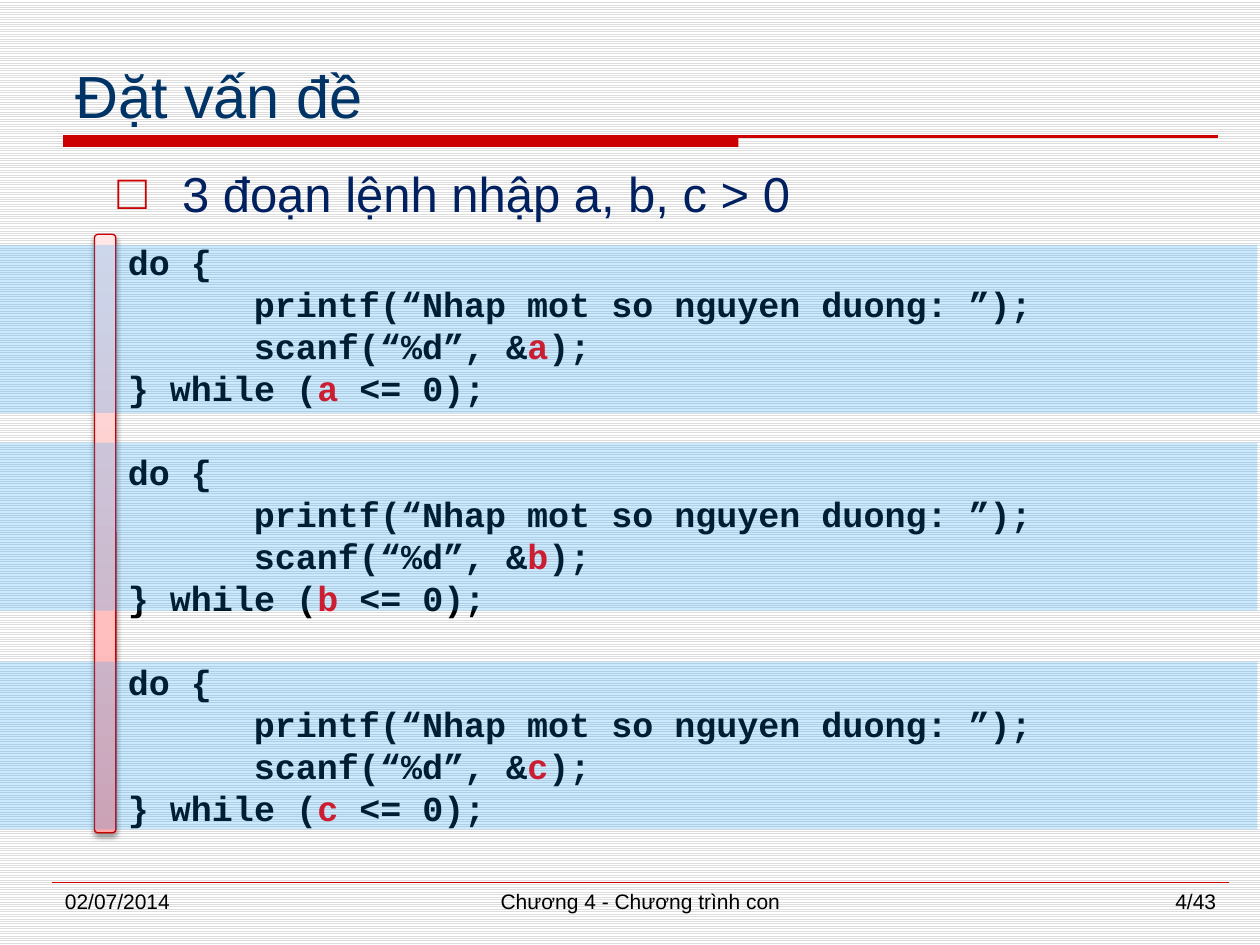
from lxml import etree
from pptx import Presentation
from pptx.dml.color import RGBColor
from pptx.enum.dml import MSO_PATTERN
from pptx.enum.shapes import MSO_CONNECTOR, MSO_SHAPE
from pptx.enum.text import MSO_ANCHOR, PP_ALIGN
from pptx.oxml.ns import qn
from pptx.util import Pt

LEFT, CENTER, RIGHT, JUSTIFY = PP_ALIGN.LEFT, PP_ALIGN.CENTER, PP_ALIGN.RIGHT, PP_ALIGN.JUSTIFY
TOP, BOTTOM = MSO_ANCHOR.TOP, MSO_ANCHOR.BOTTOM
RECTANGLE, ROUNDED = MSO_SHAPE.RECTANGLE, MSO_SHAPE.ROUNDED_RECTANGLE
STRAIGHT = MSO_CONNECTOR.STRAIGHT

# Content
TITLE = "Đặt vấn đề"
BULLET = "3 đoạn lệnh nhập a, b, c > 0"
VARIABLES = ["a", "b", "c"]
# Each line: text before the variable, text after it (None: no variable)
LOOP = [
    ("do {", None),
    ("\tprintf(“Nhap mot so nguyen duong: ”);", None),
    ("\tscanf(“%d”, &", ");"),
    ("} while (", " <= 0);"),
]
FOOTERS = [  # text, left, width, alignment
    ("02/07/2014", 30, 156, LEFT),
    ("Chương 4 - Chương trình con", 210, 312, CENTER),
    ("4/43", 546, 156, RIGHT),
]
BAND_TOPS = [139.9, 252.9, 378]

THEME = {
    "paper": "FFFFFF", "stripe": "DDDDDD", "red": "CC0000", "band": "0099FF",
    "bar_line": "C80000",
    "bar_stops": [(0, "FFA5A5"), (35, "FFBFBF"), (100, "FFE7E7")],
    "title": {"size": Pt(34), "name": "Arial", "color": "003366"},
    "bullet": {"size": Pt(28), "name": "Arial", "color": "002060"},
    "footer": {"size": Pt(12), "name": "Arial", "color": "000000"},
    "code": {"size": Pt(20), "name": "Courier New", "bold": True, "color": "000000"},
    "variable": {"size": Pt(20), "name": "Courier New", "bold": True, "color": "FF0000"},
}
CODE_PITCH = 24
CODE_TAB = 72


def rgb(value):
    return RGBColor.from_string(value)


def add_xml(parent, tag, **attributes):
    return etree.SubElement(parent, qn(tag), {key: str(value) for key, value in attributes.items()})


def add_span(para, text, style):
    span = para.add_run()
    span.text = text
    for key, value in style.items():
        if key == "color":
            span.font.color.rgb = rgb(value)
        else:
            setattr(span.font, key, value)


def add_box(page, left, top, width, height, anchor=TOP):
    frame = page.shapes.add_textbox(Pt(left), Pt(top), Pt(width), Pt(height)).text_frame
    frame.word_wrap = True
    frame.vertical_anchor = anchor
    return frame


def add_line(page, left, right, y, weight):
    line = page.shapes.add_connector(STRAIGHT, Pt(left), Pt(y), Pt(right), Pt(y))
    line.line.color.rgb = rgb(THEME["red"])
    line.line.width = Pt(weight)
    add_xml(line._element.spPr, "a:effectLst")


def add_block(page, kind, left, top, width, height, color):
    block = page.shapes.add_shape(kind, Pt(left), Pt(top), Pt(width), Pt(height))
    block.shadow.inherit = False
    block.fill.solid()
    block.fill.fore_color.rgb = rgb(color)
    block.line.fill.background()
    return block


def add_side_bar(page):
    bar = add_block(page, ROUNDED, 54, 133.92, 12.24, 342, THEME["red"])
    bar.line.color.rgb = rgb(THEME["bar_line"])
    bar.line.width = Pt(0.75)
    bar.fill.gradient()
    bar.fill.gradient_angle = 90
    properties = bar._element.spPr
    stops = properties.find(qn("a:gradFill")).find(qn("a:gsLst"))
    for stop in list(stops):
        stops.remove(stop)
    for position, color in THEME["bar_stops"]:
        add_xml(add_xml(stops, "a:gs", pos=position * 1000), "a:srgbClr", val=color)
    shadow = add_xml(properties.find(qn("a:effectLst")), "a:outerShdw",
                     blurRad=Pt(3.1), dist=Pt(1.6), dir=5400000, rotWithShape=0)
    add_xml(add_xml(shadow, "a:srgbClr", val="000000"), "a:alpha", val=38000)


def add_bullet(page):
    para = add_box(page, 60, 90, 624, 44).paragraphs[0]
    para.alignment = JUSTIFY
    para.space_before = Pt(3)
    add_span(para, BULLET, THEME["bullet"])
    properties = para._p.get_or_add_pPr()
    properties.set("marL", str(Pt(36.9)))
    properties.set("indent", str(-Pt(36.9)))
    add_xml(add_xml(properties, "a:buClr"), "a:srgbClr", val=THEME["red"])
    add_xml(properties, "a:buFont", typeface=THEME["bullet"]["name"])
    add_xml(properties, "a:buChar", char="□")


def add_code(page):
    frame = add_box(page, 66, 133.92, 552, 346.32)
    frame.margin_top = Pt(3.3)
    for block, variable in enumerate(VARIABLES):
        for row, (before, after) in enumerate(LOOP):
            first = block == row == 0
            para = frame.paragraphs[0] if first else frame.add_paragraph()
            para.line_spacing = Pt(CODE_PITCH)
            if row == 0 and block > 0:
                para.space_before = Pt(CODE_PITCH)
            tabs = add_xml(para._p.get_or_add_pPr(), "a:tabLst")
            add_xml(tabs, "a:tab", pos=Pt(CODE_TAB), algn="l")
            add_span(para, before, THEME["code"])
            if after:
                add_span(para, variable, THEME["variable"])
                add_span(para, after, THEME["code"])


def main():
    deck = Presentation()
    deck.slide_width, deck.slide_height = Pt(720), Pt(540)
    page = deck.slides.add_slide(deck.slide_layouts[6])

    # Striped background
    paper = page.background.fill
    paper.patterned()
    paper.pattern = MSO_PATTERN.LIGHT_HORIZONTAL
    paper.fore_color.rgb = rgb(THEME["stripe"])
    paper.back_color.rgb = rgb(THEME["paper"])

    # Title with its rule, and the footer rule
    add_block(page, RECTANGLE, 36, 78, 386, 6, THEME["red"])
    add_line(page, 36, 696, 78, 1.5)
    add_line(page, 30, 702, 504, 0.25)
    title = add_box(page, 36, 24, 660, 54, BOTTOM)
    add_span(title.paragraphs[0], TITLE, THEME["title"])

    # Body
    add_bullet(page)
    add_side_bar(page)
    add_code(page)

    # Translucent bands over the loops
    for top in BAND_TOPS:
        band = add_block(page, RECTANGLE, 0, top, 718.56, 96, THEME["band"])
        color = band._element.spPr.find(qn("a:solidFill")).find(qn("a:srgbClr"))
        add_xml(color, "a:alpha", val=20000)

    # Footer
    for text, left, width, alignment in FOOTERS:
        para = add_box(page, left, 504, width, 25.2).paragraphs[0]
        para.alignment = alignment
        add_span(para, text, THEME["footer"])

    deck.save("out.pptx")


if __name__ == "__main__":
    main()
